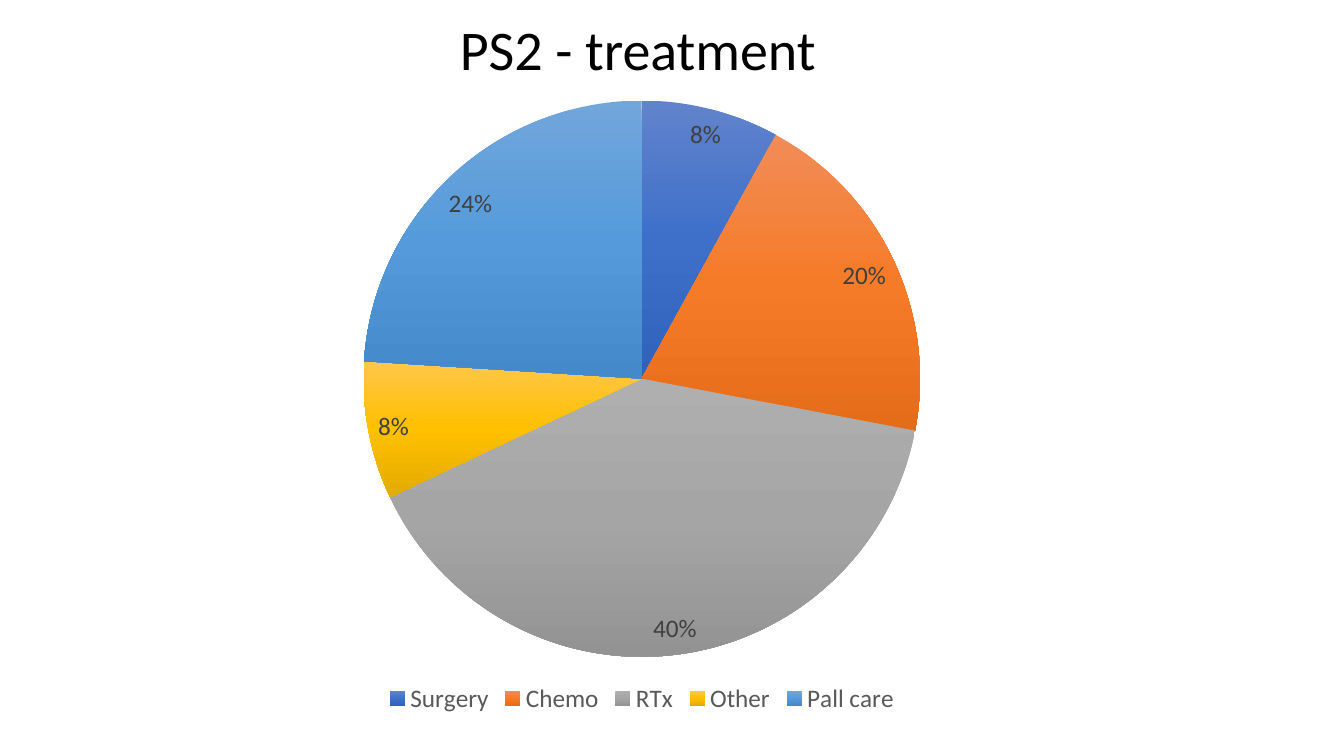
from copy import deepcopy

from pptx import Presentation
from pptx.chart.data import CategoryChartData
from pptx.dml.color import RGBColor
from pptx.enum.chart import XL_CHART_TYPE as ChartType
from pptx.enum.chart import XL_LABEL_POSITION as LabelPosition
from pptx.enum.chart import XL_LEGEND_POSITION as LegendPosition
from pptx.enum.text import MSO_ANCHOR, PP_ALIGN
from pptx.util import Inches, Pt

TITLE_ONLY = 5
# Treatment, share in percent, gradient from top to bottom
TREATMENTS = [
    ("Surgery", 8, ("6183CB", "3E70CA", "3062BB")),
    ("Chemo", 20, ("F18C57", "F67B28", "E56C19")),
    ("RTx", 40, ("AFAFAF", "A5A5A5", "939393")),
    ("Other", 8, ("FFC64B", "FFC000", "E3AB00")),
    ("Pall care", 24, ("71A6DB", "559BDB", "448ACA")),
]


def color(hex_value):
    return RGBColor.from_string(hex_value)


def set_attributes(target, values):
    for name, value in values.items():
        setattr(target, name, value)


class SlideBuilder:
    font_name = "Calibri"

    def __init__(self, presentation):
        layout = presentation.slide_layouts[TITLE_ONLY]
        self.slide = presentation.slides.add_slide(layout)

    def style_font(self, font, size, hex_value):
        set_attributes(font, {"name": self.font_name, "size": Pt(size), "bold": False})
        font.color.rgb = color(hex_value)

    def title(self, text, left, top, width, height):
        title = self.slide.shapes.title
        set_attributes(title, {
            "left": Inches(left), "top": Inches(top),
            "width": Inches(width), "height": Inches(height),
        })
        set_attributes(title.text_frame, {
            "text": text, "word_wrap": False, "vertical_anchor": MSO_ANCHOR.TOP,
        })
        paragraph = title.text_frame.paragraphs[0]
        paragraph.alignment = PP_ALIGN.LEFT
        self.style_font(paragraph.runs[0].font, 40, "000000")

    def vertical_gradient(self, fill, hex_values):
        """Fill with three evenly spaced colours, from top to bottom."""
        fill.gradient()
        fill.gradient_angle = 270
        first = fill.gradient_stops[0]._gs
        first.addnext(deepcopy(first))
        for index, (stop, hex_value) in enumerate(zip(fill.gradient_stops, hex_values)):
            stop.position = index / 2
            stop.color.rgb = color(hex_value)

    def pie(self, treatments, left, top, width, height):
        names, shares, gradients = zip(*treatments)
        data = CategoryChartData()
        data.categories = names
        data.add_series("Series 1", shares)
        chart = self.slide.shapes.add_chart(
            ChartType.PIE, Inches(left), Inches(top), Inches(width), Inches(height), data
        ).chart
        set_attributes(chart, {"has_title": False, "has_legend": True})
        self.style_font(chart.font, 10, "000000")

        set_attributes(chart.legend, {
            "position": LegendPosition.BOTTOM, "include_in_layout": False,
        })
        self.style_font(chart.legend.font, 18, "595959")

        plot = chart.plots[0]
        set_attributes(plot, {"vary_by_categories": True, "has_data_labels": True})
        set_attributes(plot.data_labels, {
            "show_percentage": True, "show_value": False,
            "number_format": "0%", "number_format_is_linked": False,
            "position": LabelPosition.BEST_FIT,
        })
        self.style_font(plot.data_labels.font, 18, "404040")

        for index, gradient in enumerate(gradients):
            point_format = plot.series[0].points[index].format
            self.vertical_gradient(point_format.fill, gradient)
            point_format.line.fill.background()


def main():
    presentation = Presentation()
    set_attributes(presentation, {
        "slide_width": Inches(13.33), "slide_height": Inches(7.5),
    })
    builder = SlideBuilder(presentation)
    builder.pie(TREATMENTS, 2.02, 0.86, 8.69, 6.27)
    builder.title("PS2 - treatment", 4.46, 0.09, 3.95, 0.77)
    presentation.save("out.pptx")


if __name__ == "__main__":
    main()
